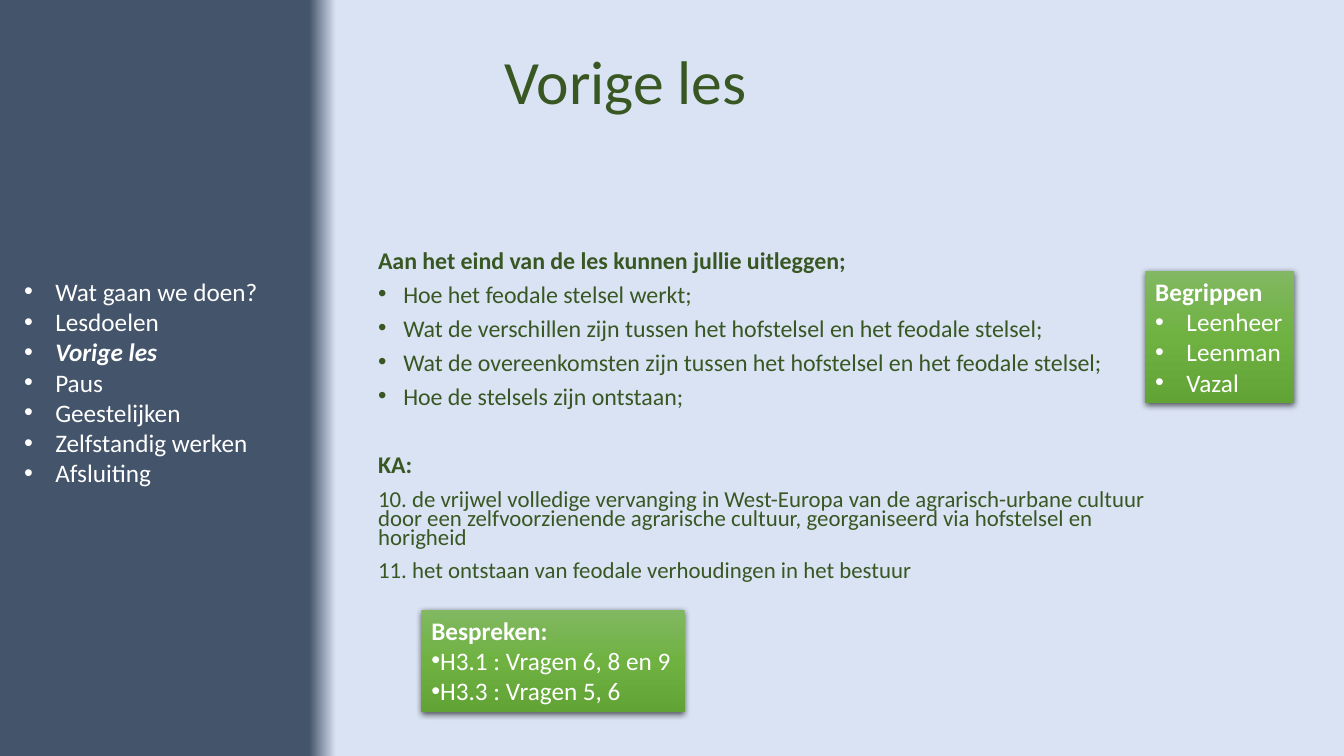
from copy import deepcopy
from pptx import Presentation
from pptx.dml.color import RGBColor
from pptx.enum.shapes import MSO_SHAPE
from pptx.enum.text import MSO_ANCHOR, MSO_AUTO_SIZE, PP_ALIGN
from pptx.oxml import parse_xml
from pptx.oxml.ns import nsdecls, qn
from pptx.util import Inches, Pt

deck = Presentation()
deck.slide_width, deck.slide_height = Inches(13.33), Inches(7.5)
slide = deck.slides.add_slide(deck.slide_layouts[1])
hue = RGBColor.from_string
GREEN, WHITE = "385723", "FFFFFF"


def area(*shares):
    """Turn left, top, width, height in percent into slide lengths."""
    sides = (deck.slide_width, deck.slide_height) * 2
    return [round(side * share / 100) for side, share in zip(sides, shares)]


def write(frame, lines, color, space=1.0, gap=0):
    """Fill a frame with lines of (text, size, style, bullet indent or None)."""
    for i, (text, size, style, indent) in enumerate(lines):
        para = frame.paragraphs[0] if i == 0 else frame.add_paragraph()
        para.alignment = PP_ALIGN.LEFT
        para.line_spacing = space
        para.space_before = Pt(gap)
        props = para._p.get_or_add_pPr()
        step = Inches(indent or 0)
        props.set("marL", str(step))
        props.set("indent", str(-step))
        if indent is None:
            mark = "<a:buNone %s/>"
        else:
            mark = '<a:buChar %s char="•"/>'
            props.append(parse_xml('<a:buFont %s typeface="Arial"/>' % nsdecls("a")))
        props.append(parse_xml(mark % nsdecls("a")))
        run = para.add_run()
        run.text = text
        font = run.font
        font.name, font.size = "Calibri", Pt(size)
        font.bold, font.italic = "b" in style, "i" in style
        font.color.rgb = hue(color)


# Background: dark side band fading into light blue
back = slide.background.fill
back.gradient()
back.gradient_angle = 0
for stop, (spot, color) in zip(back.gradient_stops, [(0.23, "44546A"), (0.25, "DAE3F3")]):
    stop.position, stop.color.rgb = spot, hue(color)

# Title
title = slide.shapes.title
title.left, title.top, title.width, title.height = area(36.76, 2.27, 57.91, 17.87)
title.text_frame.vertical_anchor = MSO_ANCHOR.MIDDLE
title.text_frame.auto_size = MSO_AUTO_SIZE.NONE
write(title.text_frame, [("Vorige les", 44, "", None)], GREEN, 0.9)

# Agenda in the side band
menu = slide.shapes.add_textbox(*area(1.05, 35.87, 19.13, 29.6)).text_frame
menu.word_wrap = False
menu.auto_size = MSO_AUTO_SIZE.SHAPE_TO_FIT_TEXT
steps = ["Wat gaan we doen?", "Lesdoelen", "Vorige les", "Paus",
         "Geestelijken", "Zelfstandig werken", "Afsluiting"]
write(menu, [(step, 18, "bi" if step == "Vorige les" else "", 0.31) for step in steps], WHITE)

# Green boxes: place, heading, bullet indent, items
boxes = [
    ((31.36, 80.67, 19.58, 13.47), "Bespreken:", 0,
     ["H3.1 : Vragen 6, 8 en 9", "H3.3 : Vragen 5, 6"]),
    ((85.22, 35.87, 11.1, 17.47), "Begrippen", 0.31,
     ["Leenheer", "Leenman", "Vazal"]),
]
for place, head, indent, items in boxes:
    box = slide.shapes.add_shape(MSO_SHAPE.RECTANGLE, *area(*place))
    box.line.fill.background()
    box.fill.gradient()
    box.fill.gradient_angle = 270
    stops = box._element.spPr.find(".//" + qn("a:gsLst"))
    stops.append(deepcopy(stops[-1]))
    shades = [(0, "81B861"), (0.5, "6FB242"), (1, "62A336")]
    for stop, (spot, color) in zip(box.fill.gradient_stops, shades):
        stop.position, stop.color.rgb = spot, hue(color)
    box.shadow.inherit = False
    box._element.spPr.find(qn("a:effectLst")).append(parse_xml(
        '<a:outerShdw %s blurRad="%d" dist="%d" dir="5400000" algn="ctr" rotWithShape="0">'
        '<a:srgbClr val="000000"><a:alpha val="63000"/></a:srgbClr></a:outerShdw>'
        % (nsdecls("a"), Pt(4.5), Pt(1.5))))
    frame = box.text_frame
    frame.vertical_anchor = MSO_ANCHOR.TOP
    frame.word_wrap = False
    frame.auto_size = MSO_AUTO_SIZE.SHAPE_TO_FIT_TEXT
    write(frame, [(head, 18, "b", None)] + [(item, 18, "", indent) for item in items], WHITE)

# Lesson goals
body = slide.placeholders[1]
body.left, body.top, body.width, body.height = area(27.38, 32.8, 59.26, 47.87)
body.text_frame.auto_size = MSO_AUTO_SIZE.NONE
goals = ["Hoe het feodale stelsel werkt;",
         "Wat de verschillen zijn tussen het hofstelsel en het feodale stelsel;",
         "Wat de overeenkomsten zijn tussen het hofstelsel en het feodale stelsel;",
         "Hoe de stelsels zijn ontstaan;"]
traits = ["10. de vrijwel volledige vervanging in West-Europa van de agrarisch-urbane cultuur "
          "door een zelfvoorzienende agrarische cultuur, georganiseerd via hofstelsel en horigheid",
          "11. het ontstaan van feodale verhoudingen in het bestuur"]
write(body.text_frame,
      [("Aan het eind van de les kunnen jullie uitleggen;", 17.1, "b", None)]
      + [(goal, 17.1, "", 0.25) for goal in goals]
      + [("KA:", 17.1, "b", None)]
      + [(trait, 16.3, "", None) for trait in traits], GREEN, 0.7, 10)
body.text_frame.paragraphs[len(goals) + 1].space_before = Pt(34.5)

deck.save("out.pptx")
